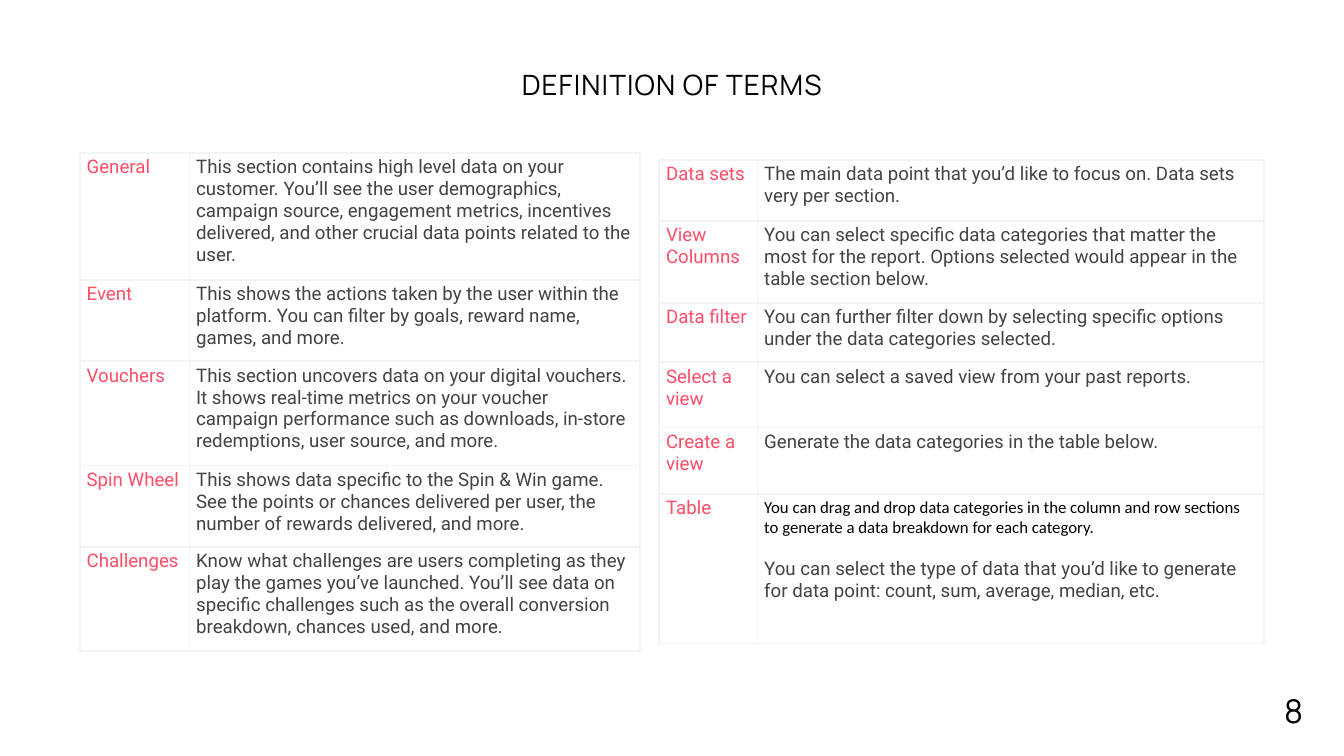
from lxml import etree
from pptx import Presentation
from pptx.dml.color import RGBColor
from pptx.enum.text import MSO_ANCHOR, MSO_AUTO_SIZE, PP_ALIGN
from pptx.oxml.ns import qn
from pptx.util import Cm, Pt

MIDDLE, CENTER, LEFT = MSO_ANCHOR.MIDDLE, PP_ALIGN.CENTER, PP_ALIGN.LEFT
NO_FIT = MSO_AUTO_SIZE.NONE

TITLE = "DEFINITION OF TERMS"
PAGE = "8"

SECTIONS = {
    "at": (3.02, 5.79),
    "cols": (4.14, 17.02),
    "rows": [
        (4.8, "General", ["This section contains high level data on your customer. You’ll see the user demographics, campaign source, engagement metrics, incentives delivered, and other crucial data points related to the user."]),
        (3.07, "Event", ["This shows the actions taken by the user within the platform. You can filter by goals, reward name, games, and more."]),
        (3.94, "Vouchers", ["This section uncovers data on your digital vouchers. It shows real-time metrics on your voucher campaign performance such as downloads, in-store redemptions, user source, and more."]),
        (3.07, "Spin Wheel", ["This shows data specific to the Spin & Win game. See the points or chances delivered per user, the number of rewards delivered, and more."]),
        (3.94, "Challenges", ["Know what challenges are users completing as they play the games you’ve launched. You’ll see data on specific challenges such as the overall conversion breakdown, chances used, and more."]),
    ],
}
CONTROLS = {
    "at": (24.92, 6.05),
    "cols": (3.71, 19.15),
    "rows": [
        (2.31, "Data sets", ["The main data point that you’d like to focus on. Data sets very per section."]),
        (3.1, "View Columns", ["You can select specific data categories that matter the most for the report. Options selected would appear in the table section below."]),
        (2.24, "Data filter", ["You can further filter down by selecting specific options under the data categories selected."]),
        (2.46, "Select a view", ["You can select a saved view from your past reports."]),
        (2.51, "Create a view", ["Generate the data categories in the table below."]),
        (5.66, "Table", [
            "You can drag and drop data categories in the column and row sections to generate a data breakdown for each category.",
            "You can select the type of data that you’d like to generate for data point: count, sum, average, median, etc.",
        ]),
    ],
}

THEME = {
    "title": {"name": "Manrope", "size": Pt(30), "color": "000000"},
    "page": {"name": "Manrope", "size": Pt(35), "color": "000000"},
    "term": {"name": "Roboto", "size": Pt(20), "color": "FF4D67"},
    "body": {"name": "Roboto", "size": Pt(20), "color": "434343"},
    "lead": {"name": "Calibri", "size": Pt(18), "color": "000000"},
    "cell": "FFFFFF",
    "border": "F2F3F4",
    "border_width": Pt(2.25),
    "gap": Pt(21),
}


def write(p, text, style):
    r = p.add_run()
    r.text = text
    for key, value in THEME[style].items():
        if key == "color":
            r.font.color.rgb = RGBColor.from_string(value)
        else:
            setattr(r.font, key, value)
    return r


def set_frame(tf, inset, **formats):
    sides = ("left", "top", "right", "bottom")
    for key, value in {**{f"margin_{side}": Cm(inset) for side in sides}, **formats}.items():
        setattr(tf, key, value)


def add_borders(cell):
    tcPr = cell._tc.get_or_add_tcPr()
    for i, tag in enumerate(("a:lnL", "a:lnR", "a:lnT", "a:lnB")):
        ln = etree.Element(qn(tag), w=str(THEME["border_width"]))
        fill = etree.SubElement(ln, qn("a:solidFill"))
        etree.SubElement(fill, qn("a:srgbClr"), val=THEME["border"])
        tcPr.insert(i, ln)


def fill_cell(cell, paragraphs):
    cell.fill.solid()
    cell.fill.fore_color.rgb = RGBColor.from_string(THEME["cell"])
    add_borders(cell)
    tf = cell.text_frame
    for i, (text, style) in enumerate(paragraphs):
        p = tf.add_paragraph() if i else tf.paragraphs[0]
        if i:
            p.space_before = THEME["gap"]
        write(p, text, style)


def add_terms(s, data):
    rows, cols = data["rows"], data["cols"]
    size = sum(cols), sum(height for height, _, _ in rows)
    box = map(Cm, (*data["at"], *size))
    table = s.shapes.add_table(len(rows), len(cols), *box).table
    table.first_row = table.horz_banding = False
    for col, width in zip(table.columns, cols):
        col.width = Cm(width)
    for i, (height, term, texts) in enumerate(rows):
        table.rows[i].height = Cm(height)
        styles = ["lead"] * (len(texts) - 1) + ["body"]
        fill_cell(table.cell(i, 0), [(term, "term")])
        fill_cell(table.cell(i, 1), list(zip(texts, styles)))


def add_title(s):
    sp = s.shapes.title
    sp.left, sp.top, sp.width, sp.height = map(Cm, (18.11, -0.74, 14.58, 7.67))
    set_frame(sp.text_frame, 0.15, vertical_anchor=MIDDLE, word_wrap=True, auto_size=NO_FIT)
    p = sp.text_frame.paragraphs[0]
    p.alignment, p.line_spacing = CENTER, Pt(42)
    r = write(p, TITLE, "title")
    r._r.get_or_add_rPr().set("spc", "120")


def add_page_number(s):
    sp = s.shapes.add_textbox(*map(Cm, (48.54, 25.27, 0.79, 2.21)))
    set_frame(sp.text_frame, 0, word_wrap=True)
    p = sp.text_frame.paragraphs[0]
    p.alignment, p.line_spacing = LEFT, Pt(66.5)
    write(p, PAGE, "page")


def main():
    prs = Presentation()
    prs.slide_width, prs.slide_height = Cm(50.8), Cm(28.58)
    s = prs.slides.add_slide(prs.slide_layouts[5])
    for data in (SECTIONS, CONTROLS):
        add_terms(s, data)
    add_page_number(s)
    add_title(s)
    prs.save("out.pptx")


if __name__ == "__main__":
    main()
